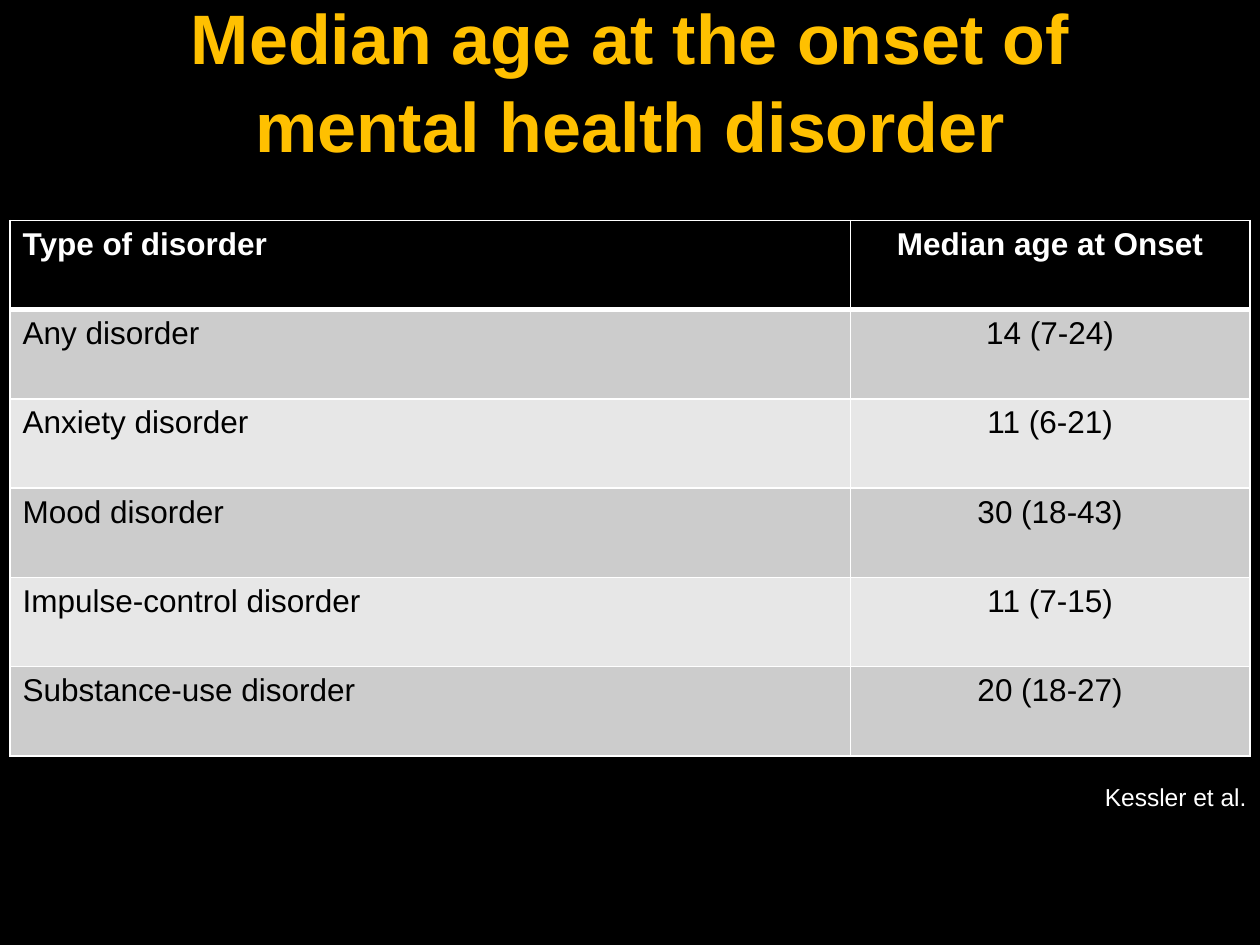
"""Build a slide with a table of median ages at the onset of mental health disorders."""
from lxml.etree import SubElement
from pptx import Presentation
from pptx.dml.color import RGBColor
from pptx.enum.text import MSO_ANCHOR, MSO_AUTO_SIZE, PP_ALIGN
from pptx.oxml.ns import qn
from pptx.util import Inches, Pt

COLORS = {"black": "000000", "white": "FFFFFF", "gold": "FFC000",
          "dark_band": "CCCCCC", "light_band": "E7E7E7"}
ROWS = [
    ("Type of disorder", "Median age at Onset"),
    ("Any disorder", "14 (7-24)"),
    ("Anxiety disorder", "11 (6-21)"),
    ("Mood disorder", "30 (18-43)"),
    ("Impulse-control disorder", "11 (7-15)"),
    ("Substance-use disorder", "20 (18-27)"),
]


def style(p, size, color, bold=False, align=PP_ALIGN.LEFT):
    p.alignment = align
    p.font.name = "Arial"
    p.font.size = Pt(size)
    p.font.bold = bold
    p.font.color.rgb = RGBColor.from_string(COLORS[color])


def add_border(cell, side, width):
    tc_pr = cell._tc.get_or_add_tcPr()
    ln = SubElement(tc_pr, qn(f"a:ln{side}"), w=str(Pt(width)))
    fill = SubElement(ln, qn("a:solidFill"))
    SubElement(fill, qn("a:srgbClr"), val=COLORS["white"])


prs = Presentation()
prs.slide_width, prs.slide_height = Inches(10), Inches(7.5)
s = prs.slides.add_slide(prs.slide_layouts[5])
s.background.fill.solid()
s.background.fill.fore_color.rgb = RGBColor.from_string(COLORS["black"])

title = s.shapes.title
title.left, title.top = Inches(0.5), Inches(0)
title.width, title.height = Inches(9), Inches(1.25)
tf = title.text_frame
tf.text = "Median age at the onset of mental health disorder"
tf.vertical_anchor = MSO_ANCHOR.MIDDLE
tf.auto_size = MSO_AUTO_SIZE.NONE
style(tf.paragraphs[0], 40, "gold", True, PP_ALIGN.CENTER)
tf.paragraphs[0].line_spacing = 1.05

table = s.shapes.add_table(len(ROWS), 2, Inches(0.08), Inches(1.75),
                           Inches(9.84), Inches(4.25)).table
table.columns[0].width = Inches(6.67)
table.columns[1].width = Inches(3.17)
for i, row in enumerate(ROWS):
    table.rows[i].height = Inches(4.25 / len(ROWS))
    header = i == 0
    band = "black" if header else "dark_band" if i % 2 else "light_band"
    for j, text in enumerate(row):
        cell = table.cell(i, j)
        cell.text = text
        style(cell.text_frame.paragraphs[0], 18, "white" if header else "black",
              header, PP_ALIGN.CENTER if j else PP_ALIGN.LEFT)
        for side, width in (("L", 1), ("R", 1), ("T", 3 if i == 1 else 1),
                            ("B", 3 if header else 1)):
            add_border(cell, side, width)
        cell.fill.solid()
        cell.fill.fore_color.rgb = RGBColor.from_string(COLORS[band])

source = s.shapes.add_textbox(Inches(8.67), Inches(6.16), Inches(1.5), Inches(0.34))
tf = source.text_frame
tf.word_wrap = True
tf.auto_size = MSO_AUTO_SIZE.SHAPE_TO_FIT_TEXT
tf.text = "Kessler et al."
style(tf.paragraphs[0], 14, "white")

prs.save("out.pptx")
